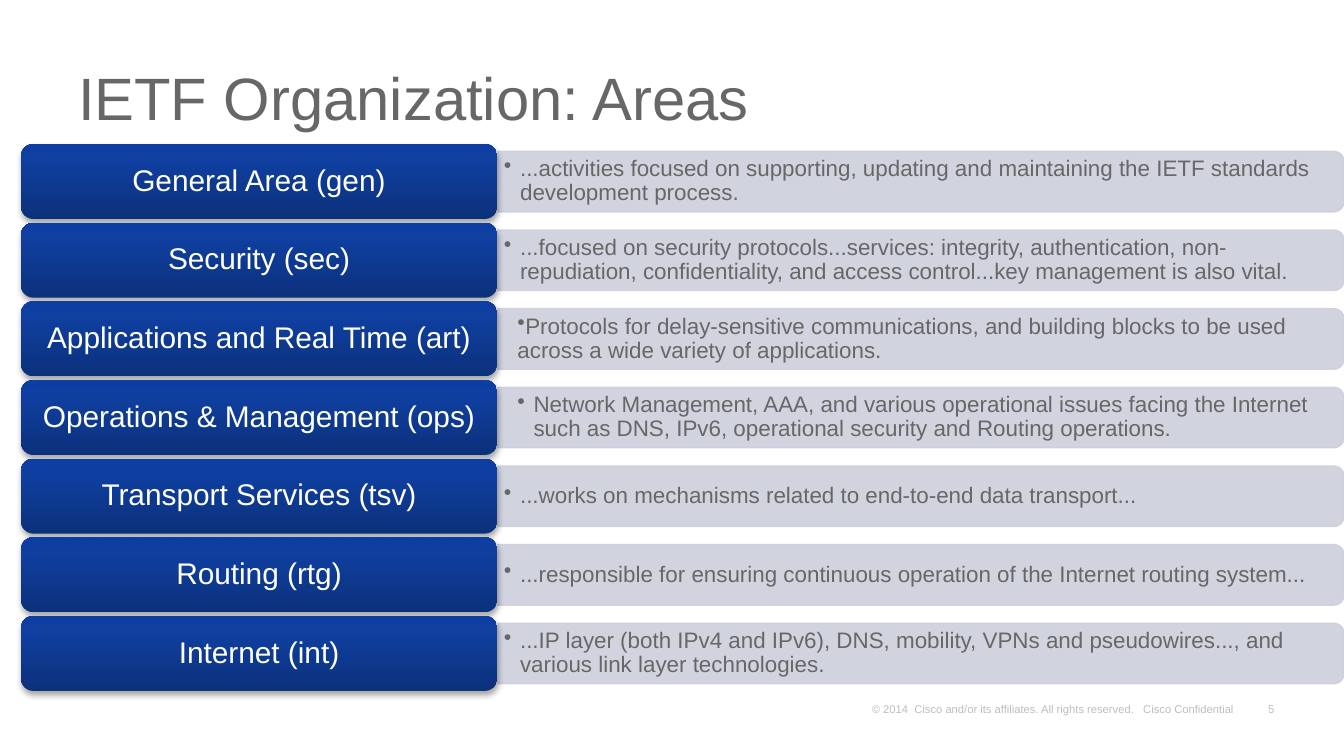
from copy import deepcopy
from dataclasses import dataclass

from pptx import Presentation
from pptx.dml.color import RGBColor
from pptx.enum.shapes import MSO_SHAPE
from pptx.enum.text import MSO_ANCHOR, MSO_AUTO_SIZE, PP_ALIGN
from pptx.oxml import parse_xml
from pptx.oxml.ns import nsdecls, qn
from pptx.util import Pt

ROUND, ROUND_TOP = MSO_SHAPE.ROUNDED_RECTANGLE, MSO_SHAPE.ROUND_2_SAME_RECTANGLE
MIDDLE, BOTTOM = MSO_ANCHOR.MIDDLE, MSO_ANCHOR.BOTTOM
LEFT, CENTER, RIGHT = PP_ALIGN.LEFT, PP_ALIGN.CENTER, PP_ALIGN.RIGHT
NO_FIT = MSO_AUTO_SIZE.NONE


@dataclass(frozen=True)
class Theme:
    font: str = "Arial"
    text: str = "676767"
    label_text: str = "FFFFFF"
    footer_text: str = "000000"
    bar: str = "CDCFDC"
    gradient: tuple = ((0, "0C317B"), (0.8, "0F3FA0"), (1, "0D3EA4"))
    title_size: float = 32
    label_size: float = 16
    body_size: float = 12
    footer_size: float = 6


THEME = Theme()
TIGHT, WIDE = (3.6, 1.8), (10.8, 5.4)
HANG = 8.64

AREAS = [
    ("General Area (gen)",
     "...activities focused on supporting, updating and maintaining the IETF "
     "standards development process.", TIGHT, HANG),
    ("Security (sec)",
     "...focused on security protocols...services: integrity, authentication, "
     "non-repudiation, confidentiality, and access control...key management "
     "is also vital.", TIGHT, HANG),
    ("Applications and Real Time (art)",
     "Protocols for delay-sensitive communications, and building blocks to be "
     "used across a wide variety of applications.", WIDE, 0),
    ("Operations & Management (ops)",
     "Network Management, AAA, and various operational issues facing the "
     "Internet such as DNS, IPv6, operational security and Routing "
     "operations.", WIDE, HANG),
    ("Transport Services (tsv)",
     "...works on mechanisms related to end-to-end data transport...",
     TIGHT, HANG),
    ("Routing (rtg)",
     "...responsible for ensuring continuous operation of the Internet "
     "routing system...", TIGHT, HANG),
    ("Internet (int)",
     "...IP layer (both IPv4 and IPv6), DNS, mobility, VPNs and "
     "pseudowires..., and various link layer technologies.", TIGHT, HANG),
]


def solid(fill, color, alpha=100):
    fill.solid()
    fill.fore_color.rgb = RGBColor.from_string(color)
    if alpha < 100:
        clr = fill._xPr.find(".//" + qn("a:srgbClr"))
        clr.append(parse_xml(f'<a:alpha {nsdecls("a")} val="{alpha * 1000}"/>'))


def set_frame(tf, insets, anchor):
    tf.word_wrap = True
    tf.auto_size = NO_FIT
    tf.vertical_anchor = anchor
    tf.margin_left = tf.margin_right = Pt(insets[0])
    tf.margin_top = tf.margin_bottom = Pt(insets[1])


def write(p, text, size, color, align=LEFT, spacing=0.9, alpha=100):
    p.alignment = align
    p.line_spacing = spacing
    r = p.add_run()
    r.text = text
    r.font.name = THEME.font
    r.font.size = Pt(size)
    solid(r.font.fill, color, alpha)


def add_bullet(p, hang):
    pPr = p._p.get_or_add_pPr()
    pPr.set("marL", str(Pt(hang)))
    pPr.set("indent", str(Pt(-hang)))
    pPr.append(parse_xml(f'<a:buChar {nsdecls("a")} char="•"/>'))


def text_box(slide, x, y, w, h, insets, anchor):
    tf = slide.shapes.add_textbox(Pt(x), Pt(y), Pt(w), Pt(h)).text_frame
    set_frame(tf, insets, anchor)
    return tf.paragraphs[0]


def add_title(slide, x, y, w, h):
    s = slide.shapes.title
    s.left, s.top, s.width, s.height = Pt(x), Pt(y), Pt(w), Pt(h)
    set_frame(s.text_frame, (7.2, 3.6), MIDDLE)
    write(s.text_frame.paragraphs[0], "IETF Organization: Areas",
          THEME.title_size, THEME.text, spacing=0.8)


def add_bar(slide, x, y, w, h, text, insets, hang):
    s = slide.shapes.add_shape(ROUND_TOP, Pt(x + (w - h) / 2),
                               Pt(y + (h - w) / 2), Pt(h), Pt(w))
    s.rotation = 90
    s.shadow.inherit = False
    solid(s.fill, THEME.bar, 90)
    solid(s.line.fill, THEME.bar, 90)
    s.line.width = Pt(0.75)
    p = text_box(slide, x, y + 1.6, w - 1.6, h - 3.2, insets, MIDDLE)
    p.level = 1
    add_bullet(p, hang)
    write(p, text, THEME.body_size, THEME.text)


def add_label(slide, x, y, w, h, text):
    s = slide.shapes.add_shape(ROUND, Pt(x), Pt(y), Pt(w), Pt(h))
    s.line.fill.background()
    s.fill.gradient()
    s.fill.gradient_angle = 90
    stops = s._element.spPr.find(".//" + qn("a:gsLst"))
    stops.append(deepcopy(stops[-1]))
    for stop, (pos, color) in zip(s.fill.gradient_stops, THEME.gradient):
        stop.position = pos
        stop.color.rgb = RGBColor.from_string(color)
    s.shadow.inherit = False
    s._element.spPr.find(qn("a:effectLst")).append(parse_xml(
        f'<a:outerShdw {nsdecls("a")} blurRad="{Pt(3.1)}" dist="{Pt(1.8)}" '
        'dir="5400000" rotWithShape="0"><a:srgbClr val="000000">'
        '<a:alpha val="35000"/></a:srgbClr></a:outerShdw>'))
    set_frame(s.text_frame, (7, 4), MIDDLE)
    write(s.text_frame.paragraphs[0], text, THEME.label_size,
          THEME.label_text, CENTER)


def add_areas(slide, x, y, w, h):
    label_w, label_h, bar_h = 255.2, 40.2, 32.4
    pitch = (h - label_h) / (len(AREAS) - 1)
    for i, (name, text, insets, hang) in enumerate(AREAS):
        top = y + i * pitch
        add_bar(slide, x + label_w, top + (label_h - bar_h) / 2,
                w - label_w, bar_h, text, insets, hang)
        add_label(slide, x, top, label_w, label_h, name)


def add_footer(slide, x, y, w, h):
    number_w = 17.3
    notice_w = w - number_w
    parts = [
        (x + notice_w, number_w, "5", RIGHT),
        (x, notice_w, "© 2014  Cisco and/or its affiliates. "
         "All rights reserved.   Cisco Confidential", LEFT),
    ]
    for left, width, text, align in parts:
        p = text_box(slide, left, y, width, h, (4.9, 2.4), BOTTOM)
        write(p, text, THEME.footer_size, THEME.footer_text, align, 1, 25)


def main():
    prs = Presentation()
    prs.slide_width, prs.slide_height = Pt(720), Pt(405)
    slide = prs.slides.add_slide(prs.slide_layouts[5])
    add_footer(slide, 462.2, 373.7, 225.4, 12.2)
    add_title(slide, 34.6, 26.6, 657.4, 57.6)
    add_areas(slide, 11.2, 77.2, 708.8, 293)
    prs.save("out.pptx")


if __name__ == "__main__":
    main()
